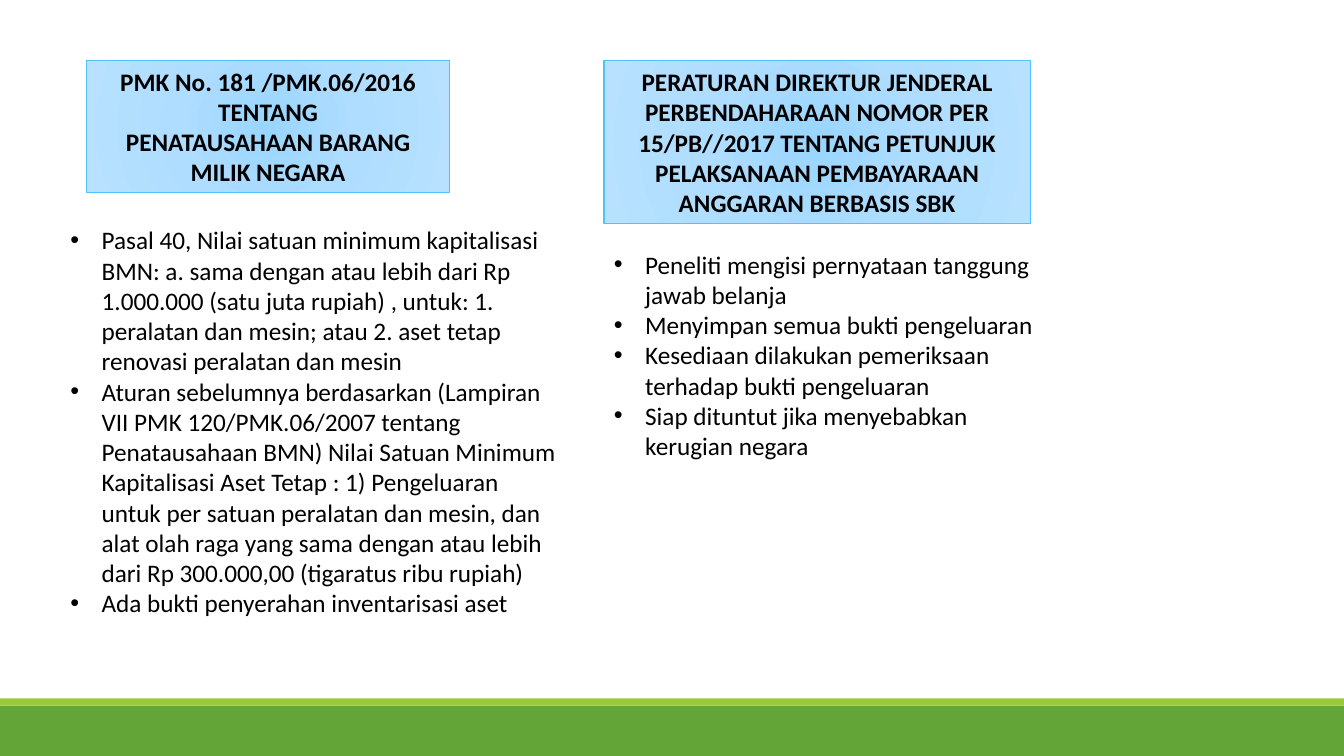
from lxml import etree
from pptx import Presentation
from pptx import util as u
from pptx.dml.color import RGBColor
from pptx.enum import shapes, text
from pptx.oxml import ns

BLACK = RGBColor(0x00, 0x00, 0x00)
GREEN = RGBColor(0x63, 0xA5, 0x37)
LIME = RGBColor(0x99, 0xCB, 0x38)
SKY = RGBColor(0x51, 0xC3, 0xF9)
HEADING_STOPS = [
    (0, RGBColor(0x99, 0xD5, 0xFE)),
    (45, RGBColor(0xAE, 0xDD, 0xFF)),
    (100, RGBColor(0xB8, 0xE1, 0xFF)),
]
FONT = "Calibri"
TEXT_SIZE = 18
BULLET_INDENT = 0.31

REGULATIONS = [
    {
        "heading_box": (0.86, 0.6, 3.6, 1.31),
        "heading": [
            "PMK No. 181 /PMK.06/2016",
            "TENTANG",
            "PENATAUSAHAAN BARANG MILIK NEGARA",
        ],
        "points_box": (0.6, 2.18, 5.07, 4.04),
        "points": [
            "Pasal 40, Nilai satuan minimum kapitalisasi BMN: a. sama dengan atau lebih dari Rp "
            "1.000.000 (satu juta rupiah) , untuk: 1. peralatan dan mesin; atau 2. aset tetap "
            "renovasi peralatan dan mesin",
            "Aturan sebelumnya berdasarkan (Lampiran VII PMK 120/PMK.06/2007 tentang "
            "Penatausahaan BMN) Nilai Satuan Minimum Kapitalisasi Aset Tetap : 1) Pengeluaran "
            "untuk per satuan peralatan dan mesin, dan alat olah raga yang sama dengan atau lebih "
            "dari Rp 300.000,00 (tigaratus ribu rupiah)",
            "Ada bukti penyerahan inventarisasi aset",
        ],
    },
    {
        "heading_box": (5.99, 0.6, 4.23, 1.62),
        "heading": [
            "PERATURAN DIREKTUR JENDERAL PERBENDAHARAAN NOMOR PER 15/PB//2017 TENTANG PETUNJUK "
            "PELAKSANAAN PEMBAYARAAN ANGGARAN BERBASIS SBK",
        ],
        "points_box": (5.99, 2.42, 4.38, 2.22),
        "points": [
            "Peneliti mengisi pernyataan tanggung jawab belanja",
            "Menyimpan semua bukti pengeluaran",
            "Kesediaan dilakukan pemeriksaan terhadap bukti pengeluaran",
            "Siap dituntut jika menyebabkan kerugian negara",
        ],
    },
]


def add_rectangle(slide, box):
    shape = slide.shapes.add_shape(shapes.MSO_SHAPE.RECTANGLE, *map(u.Inches, box))
    shape.shadow.inherit = False
    return shape


def add_paragraphs(frame, lines, alignment, bold=False):
    frame.word_wrap = True
    for index, line in enumerate(lines):
        paragraph = frame.add_paragraph() if index else frame.paragraphs[0]
        paragraph.alignment = alignment
        run = paragraph.add_run()
        run.text = line
        run.font.name = FONT
        run.font.size = u.Pt(TEXT_SIZE)
        run.font.bold = bold
        run.font.color.rgb = BLACK


def fill_radial(shape, stops):
    shape.fill.background()
    empty_fill = shape._element.spPr.find(ns.qn("a:noFill"))
    gradient = etree.Element(ns.qn("a:gradFill"), rotWithShape="1")
    stop_list = etree.SubElement(gradient, ns.qn("a:gsLst"))
    for position, color in stops:
        stop = etree.SubElement(stop_list, ns.qn("a:gs"), pos=str(position * 1000))
        etree.SubElement(stop, ns.qn("a:srgbClr"), val=str(color))
    circle = etree.SubElement(gradient, ns.qn("a:path"), path="circle")
    edges = dict.fromkeys("ltrb", "100000")
    etree.SubElement(circle, ns.qn("a:fillToRect"), **edges)
    empty_fill.getparent().replace(empty_fill, gradient)


def add_footer(slide, left, top, width, height):
    strip_height = 0.07
    bands = [
        (top + strip_height, height - strip_height, GREEN),
        (top, strip_height, LIME),
    ]
    for band_top, band_height, color in bands:
        band = add_rectangle(slide, (left, band_top, width, band_height))
        band.fill.solid()
        band.fill.fore_color.rgb = color
        band.line.fill.background()


def add_heading(slide, box, lines):
    heading = add_rectangle(slide, box)
    fill_radial(heading, HEADING_STOPS)
    heading.line.color.rgb = SKY
    heading.line.width = u.Pt(1)
    heading.text_frame.vertical_anchor = text.MSO_ANCHOR.MIDDLE
    add_paragraphs(heading.text_frame, lines, text.PP_ALIGN.CENTER, bold=True)


def add_points(slide, box, points):
    frame = slide.shapes.add_textbox(*map(u.Inches, box)).text_frame
    add_paragraphs(frame, points, text.PP_ALIGN.LEFT)
    indent = u.Inches(BULLET_INDENT)
    for paragraph in frame.paragraphs:
        properties = paragraph._p.get_or_add_pPr()
        properties.set("marL", str(indent))
        properties.set("indent", str(-indent))
        etree.SubElement(properties, ns.qn("a:buFont"), typeface="Arial")
        etree.SubElement(properties, ns.qn("a:buChar"), char="•")


def main():
    presentation = Presentation()
    presentation.slide_width = u.Inches(13.33)
    presentation.slide_height = u.Inches(7.5)
    slide = presentation.slides.add_slide(presentation.slide_layouts[6])
    add_footer(slide, 0, 6.93, 13.33, 0.57)
    for regulation in REGULATIONS:
        add_heading(slide, regulation["heading_box"], regulation["heading"])
        add_points(slide, regulation["points_box"], regulation["points"])
    presentation.save("out.pptx")


if __name__ == "__main__":
    main()
